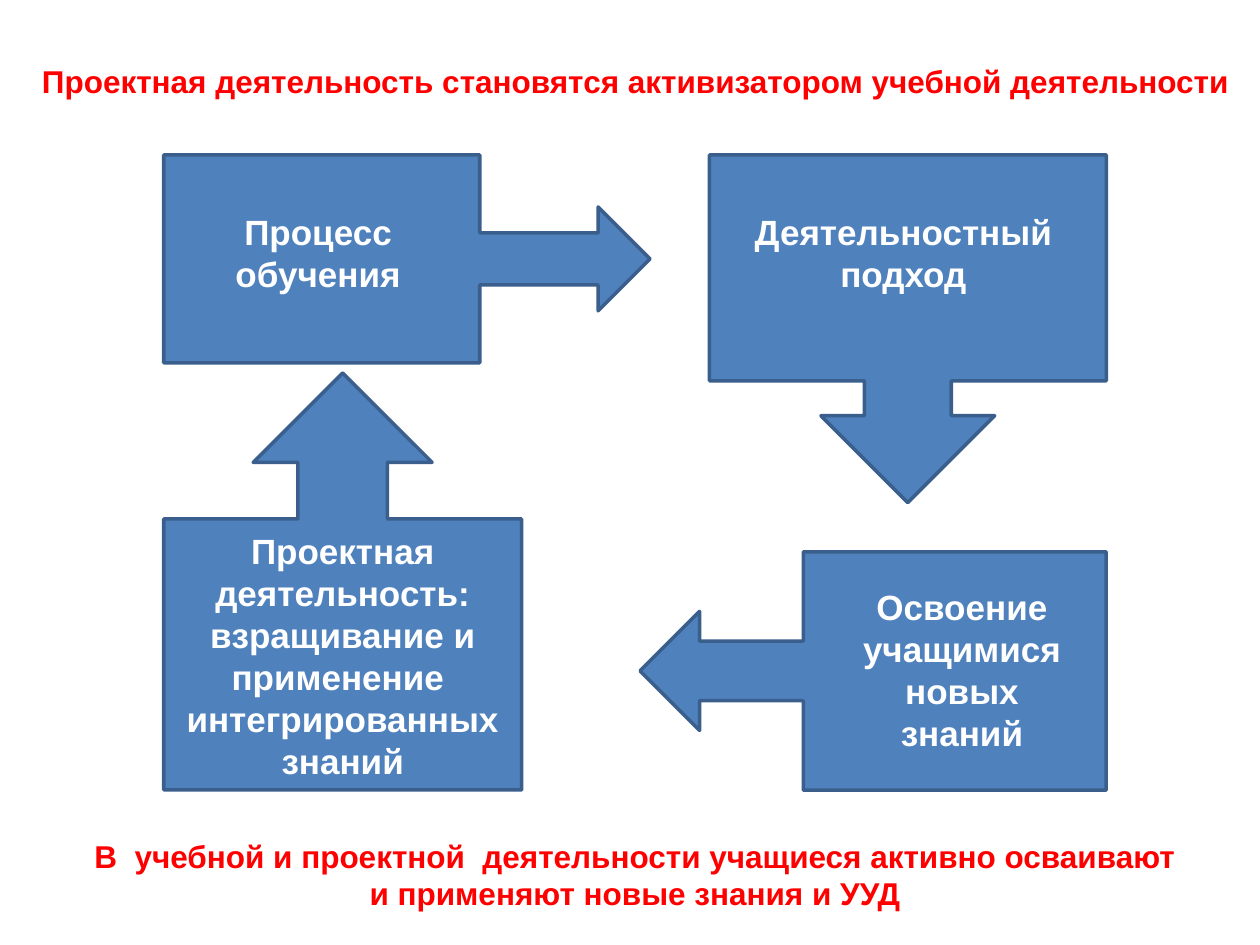
from pptx import Presentation
from pptx.dml.color import RGBColor
from pptx.enum.shapes import MSO_SHAPE as Preset
from pptx.enum.text import MSO_AUTO_SIZE as AutoSize, PP_ALIGN as Align
from pptx.util import Inches, Pt

BLUE, OUTLINE, WHITE, RED = "4F81BD", "3A5F8C", "FFFFFF", "FF0000"

STAGES = [
    (Preset.RIGHT_ARROW_CALLOUT, (1.3, 1.23, 3.86, 1.65),
     (1.46, 1.62, 2.13, 0.77), ["Процесс обучения"]),
    (Preset.DOWN_ARROW_CALLOUT, (5.63, 1.23, 3.15, 2.76),
     (5.87, 1.62, 2.6, 0.77), ["Деятельностный подход"]),
    (Preset.LEFT_ARROW_CALLOUT, (5.08, 4.38, 3.7, 1.89),
     (6.65, 4.6, 1.97, 1.45), ["Освоение учащимися новых знаний"]),
    (Preset.UP_ARROW_CALLOUT, (1.3, 2.96, 2.84, 3.31),
     (1.38, 4.15, 2.68, 2.12),
     ["Проектная деятельность:",
      "взращивание и применение  интегрированных знаний"]),
]
STATEMENTS = [
    ((0.2, 0.44, 9.69, 0.4),
     ["Проектная деятельность становятся активизатором учебной деятельности"]),
    ((0.55, 6.59, 8.98, 0.71),
     ["В  учебной и проектной  деятельности учащиеся активно осваивают "
      "и применяют новые знания и УУД"]),
]
LABEL_FONT = {"name": "Arial", "size": Pt(20), "bold": True}
STATEMENT_FONT = {**LABEL_FONT, "size": Pt(18)}


def paint(color_format, hex_color):
    color_format.rgb = RGBColor.from_string(hex_color)


def add_callout(slide, preset, place):
    callout = slide.shapes.add_shape(preset, *map(Inches, place))
    callout.shadow.inherit = False
    callout.fill.solid()
    paint(callout.fill.fore_color, BLUE)
    paint(callout.line.color, OUTLINE)
    callout.line.width = Pt(2)


def add_text(slide, place, lines, font_format, hex_color):
    frame = slide.shapes.add_textbox(*map(Inches, place)).text_frame
    frame.word_wrap = True
    frame.auto_size = AutoSize.SHAPE_TO_FIT_TEXT
    frame.text = "\n".join(lines)
    for paragraph in frame.paragraphs:
        paragraph.alignment = Align.CENTER
        font = paragraph.runs[0].font
        for attribute, value in font_format.items():
            setattr(font, attribute, value)
        paint(font.color, hex_color)


def main():
    deck = Presentation()
    deck.slide_width, deck.slide_height = Inches(10), Inches(7.5)
    slide = deck.slides.add_slide(deck.slide_layouts[6])
    for preset, callout_place, _, _ in STAGES:
        add_callout(slide, preset, callout_place)
    for _, _, label_place, label in STAGES:
        add_text(slide, label_place, label, LABEL_FONT, WHITE)
    for place, statement in STATEMENTS:
        add_text(slide, place, statement, STATEMENT_FONT, RED)
    deck.save("out.pptx")


if __name__ == "__main__":
    main()
